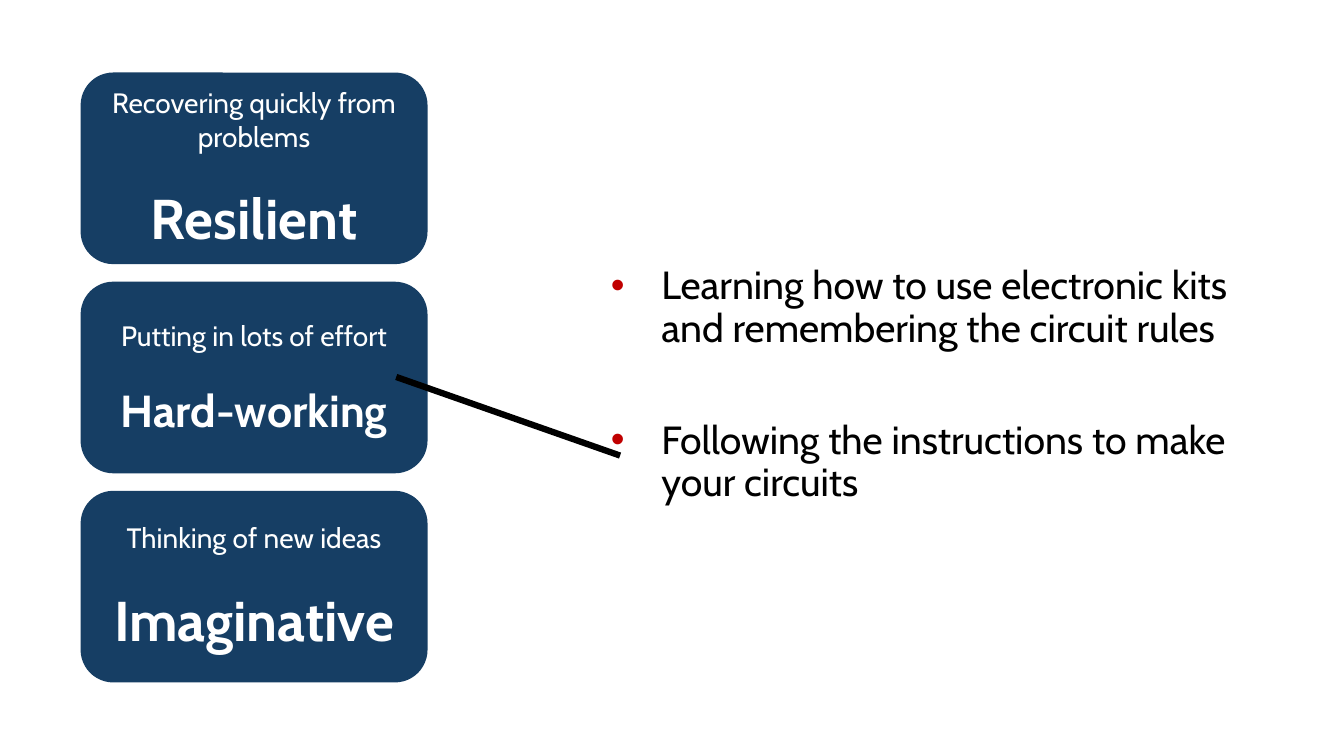
from lxml.etree import SubElement
from pptx import Presentation
from pptx.dml.color import RGBColor
from pptx.enum.shapes import MSO_CONNECTOR, MSO_SHAPE
from pptx.enum.text import MSO_ANCHOR, MSO_AUTO_SIZE, PP_ALIGN
from pptx.oxml.ns import qn
from pptx.util import Inches, Pt

NAVY = RGBColor(0x16, 0x3E, 0x64)
WHITE = RGBColor(0xFF, 0xFF, 0xFF)
BLACK = RGBColor(0, 0, 0)
RED = RGBColor(0xC0, 0, 0)

LEFT, TOP = 0.81, 0.73
WIDE, HIGH, STEP = 3.42, 1.88, 2.075

TRAITS = [
    ("Recovering quickly from problems", "Resilient", 40),
    ("Putting in lots of effort", "Hard-working", 32),
    ("Thinking of new ideas", "Imaginative", 40),
]
TASKS = [
    "Learning how to use electronic kits and remembering the circuit rules",
    "Following the instructions to make your circuits",
]


def write(frame, text, size, color, first=False, bold=False,
          align=PP_ALIGN.LEFT, gap=0, lead=1.0, dot=None):
    para = frame.paragraphs[0] if first else frame.add_paragraph()
    if dot is not None:
        mark(para, dot)
    para.text = text
    para.alignment = align
    para.space_before = Pt(gap)
    para.line_spacing = lead
    font = para.runs[0].font
    font.name = "Cabin"
    font.size = Pt(size)
    font.bold = bold
    font.color.rgb = color


def mark(para, color):
    props = para._p.get_or_add_pPr()
    props.set("marL", str(Inches(0.5)))
    props.set("indent", str(-Inches(0.5)))
    tint = SubElement(props, qn("a:buClr"))
    SubElement(tint, qn("a:srgbClr"), val=str(color))
    SubElement(props, qn("a:buFont"), typeface="Arial")
    SubElement(props, qn("a:buChar"), char="•")


def card(slide, row, hint, trait, size):
    box = slide.shapes.add_shape(
        MSO_SHAPE.ROUNDED_RECTANGLE, Inches(LEFT), Inches(TOP + row * STEP),
        Inches(WIDE), Inches(HIGH))
    box.shadow.inherit = False
    box.fill.solid()
    box.fill.fore_color.rgb = NAVY
    box.line.color.rgb = NAVY
    box.line.width = Pt(1.5)
    frame = box.text_frame
    frame.word_wrap = True
    frame.vertical_anchor = MSO_ANCHOR.MIDDLE
    write(frame, hint, 20, WHITE, first=True, align=PP_ALIGN.CENTER)
    write(frame, trait, size, WHITE, bold=True, align=PP_ALIGN.CENTER, gap=22)


def tasks(slide):
    body = slide.placeholders[1]
    body.left, body.top = Inches(5.96), Inches(1.92)
    body.width, body.height = Inches(6.89), Inches(4.17)
    frame = body.text_frame
    frame.word_wrap = True
    frame.auto_size = MSO_AUTO_SIZE.NONE
    frame.vertical_anchor = MSO_ANCHOR.MIDDLE
    frame.margin_bottom = Inches(0.41)
    for i, text in enumerate(TASKS):
        write(frame, text, 28, BLACK, first=i == 0, gap=50 * i,
              lead=0.9, dot=RED)


def link(slide, start, end):
    line = slide.shapes.add_connector(
        MSO_CONNECTOR.STRAIGHT, *map(Inches, start + end))
    line.line.color.rgb = BLACK
    line.line.width = Pt(4.5)
    SubElement(line._element.spPr, qn("a:effectLst"))


def main():
    deck = Presentation()
    deck.slide_width, deck.slide_height = Inches(13.33), Inches(7.5)
    slide = deck.slides.add_slide(deck.slide_layouts[1])
    title = slide.shapes.title._element
    title.getparent().remove(title)
    tasks(slide)
    for row, trait in enumerate(TRAITS):
        card(slide, row, *trait)
    link(slide, (3.93, 3.74), (6.15, 4.52))
    deck.save("out.pptx")


if __name__ == "__main__":
    main()
